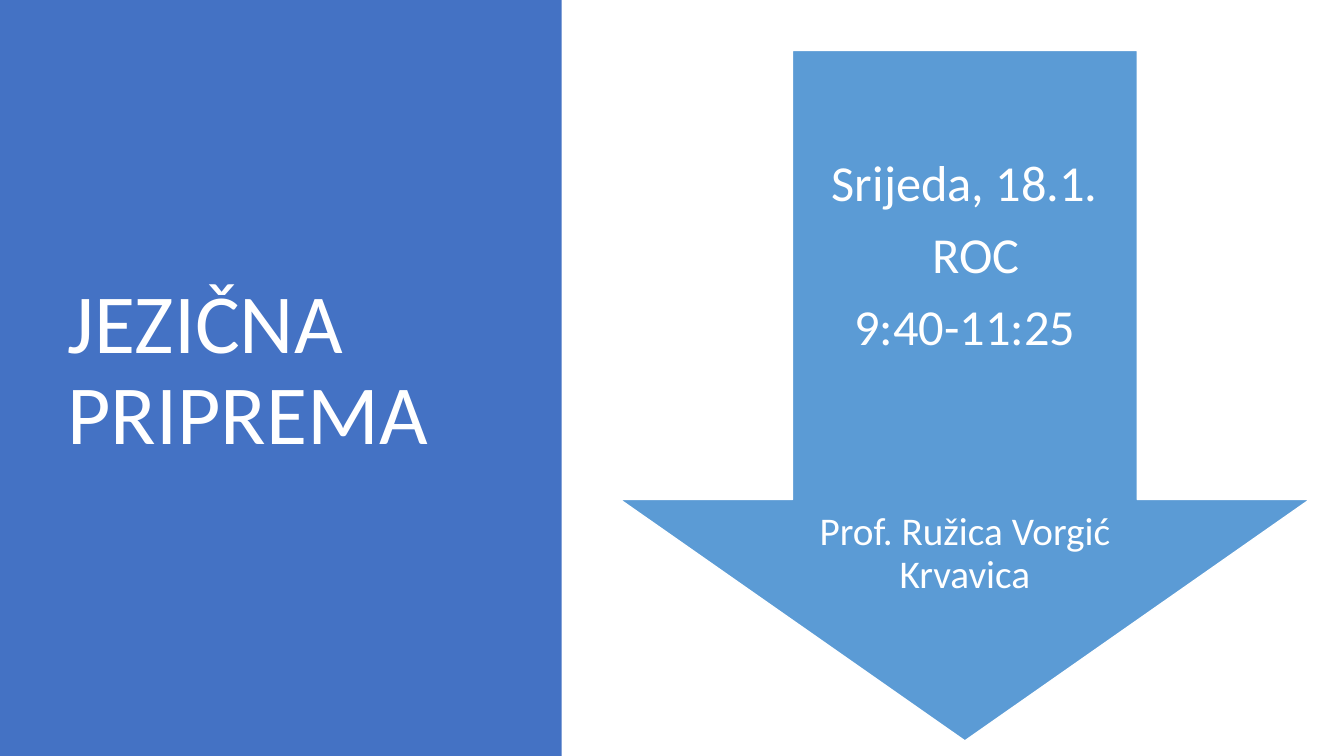
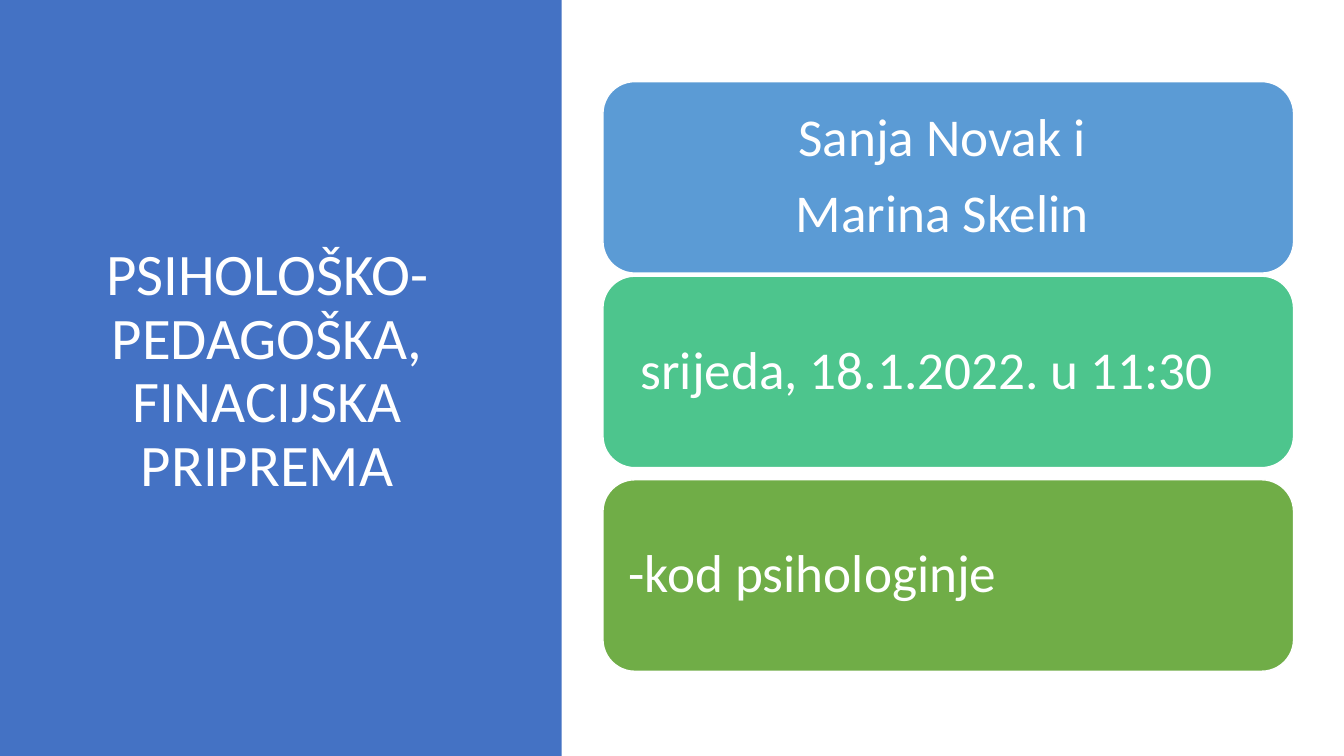
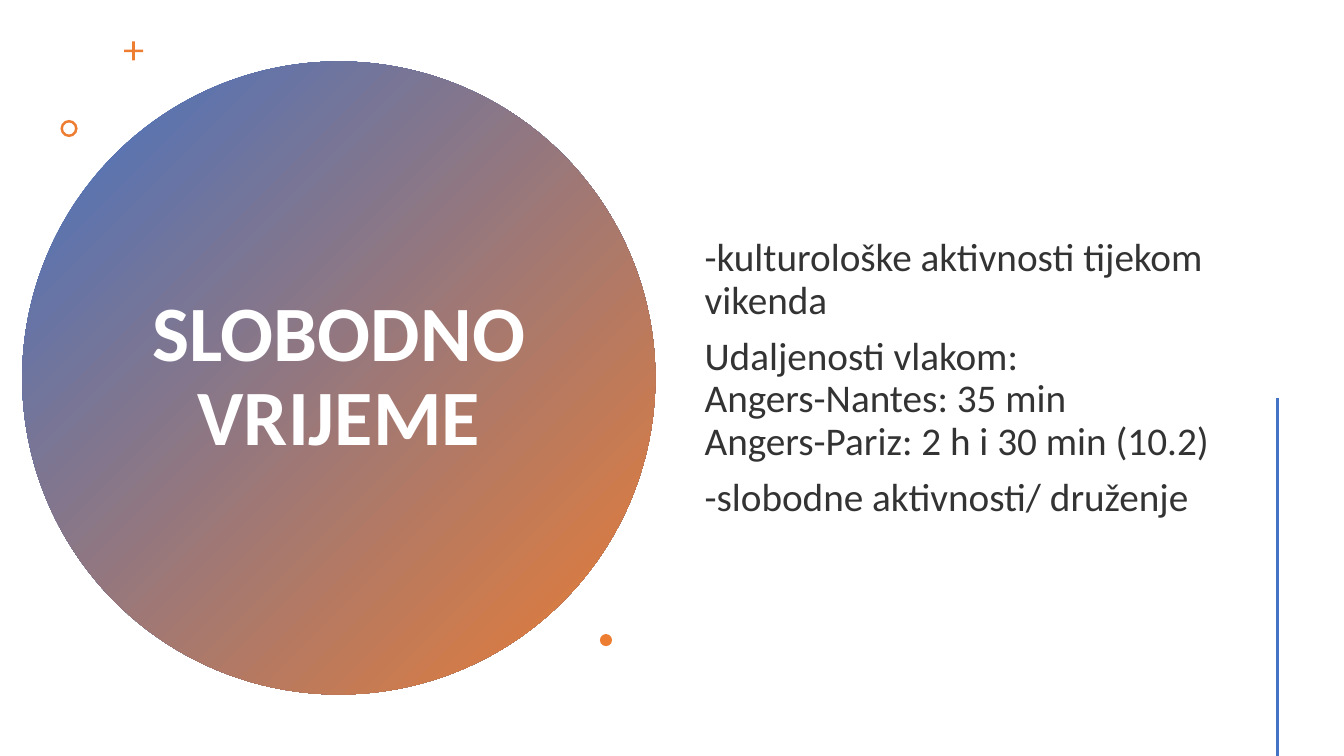
from pptx import Presentation
from pptx import util as u
from pptx.dml.color import RGBColor
from pptx.enum import shapes, text
from pptx.oxml import parse_xml
from pptx.oxml.ns import nsdecls

W, H = 13.33, 7.5
BLUE, SKY, MINT, GREEN = "4472C4", "5B9BD5", "4DC58D", "70AD47"
ORANGE, WHITE, DARK = "ED7D31", "FFFFFF", "333333"
LEFT, CENTER = text.PP_ALIGN.LEFT, text.PP_ALIGN.CENTER
KIND = shapes.MSO_SHAPE


def rgb(color):
    """Turn a hex string into a colour."""
    return RGBColor.from_string(color)


def inches(box):
    """Turn a box in inches into lengths."""
    return [u.Inches(v) for v in box]


def shape(s, kind, box, fill, line=None, adj=()):
    """Add a flat preset shape."""
    sp = s.shapes.add_shape(kind, *inches(box))
    sp.shadow.inherit = False
    for i, value in enumerate(adj):
        sp.adjustments[i] = value
    sp.fill.solid()
    sp.fill.fore_color.rgb = rgb(fill)
    if line:
        sp.line.color.rgb = rgb(line)
        sp.line.width = u.Pt(1)
    else:
        sp.line.fill.background()
    return sp


def write(sp, lines, size, align=CENTER, color=WHITE, bold=False,
          gaps=None, margins=None, inset=(0.1, 0.05)):
    """Fill a shape with lines; gaps are points above each line, margins left and right inches."""
    tf = sp.text_frame
    tf.word_wrap = True
    tf.vertical_anchor = text.MSO_ANCHOR.MIDDLE
    tf.margin_left = tf.margin_right = u.Inches(inset[0])
    tf.margin_top = tf.margin_bottom = u.Inches(inset[1])
    tf.text = "\n".join(lines)
    for i, p in enumerate(tf.paragraphs):
        p.alignment = align
        p.line_spacing = 0.9
        p.space_before = u.Pt(gaps[i] if gaps else 0)
        for side, value in (margins or {}).get(i, {}).items():
            p._p.get_or_add_pPr().set(side, str(u.Inches(value)))
        for r in p.runs:
            r.font.name = "Calibri"
            r.font.size = u.Pt(size)
            r.font.bold = bold
            r.font.color.rgb = rgb(color)


def label(s, box, lines, size, **style):
    """Add a text box."""
    write(s.shapes.add_textbox(*inches(box)), lines, size, **style)


def title_band(s, title, size, align):
    """Draw the blue band at the left with the slide title."""
    shape(s, KIND.RECTANGLE, (0, 0, 5.57, H), BLUE)
    label(s, (0.57, 0.68, 4.16, 6.02), [title], size, align=align)


def arrow(s, box):
    """Draw the down arrow with the date on its shaft and the teacher in its head."""
    x, y, w, h = box
    shape(s, KIND.DOWN_ARROW, box, SKY, WHITE, (0.5, 0.35))
    shaft = x + w / 4
    label(s, (shaft, y + 0.1 * h, w / 2, 0.4 * h),
          ["Srijeda, 18.1.", "ROC", "9:40-11:25"], 36,
          gaps=(0, 12.6, 12.6), margins={1: {"marL": 0.22}})
    label(s, (shaft, y + 0.63 * h, w / 2, 0.2 * h),
          ["Prof. Ružica Vorgić Krvavica"], 28, inset=(0.2, 0))


def cards(s, box, tops):
    """Draw the stack of rounded cards at the given tops within the box."""
    x, y, w, h = box
    rows = [
        (SKY, ["Sanja Novak i", "Marina Skelin"], CENTER, {0: {"marR": 0.12}}),
        (MINT, ["srijeda, 18.1.2022. u 11:30"], LEFT, {0: {"marL": 0.12}}),
        (GREEN, ["-kod psihologinje"], LEFT, None),
    ]
    for top, (fill, lines, align, margins) in zip(tops, rows):
        sp = shape(s, KIND.ROUNDED_RECTANGLE, (x, y + top, w, h), fill, WHITE)
        write(sp, lines, 38, align, gaps=(0, 13.3), margins=margins, inset=(0.16, 0.16))


def title_disc(s, box, title):
    """Draw the gradient disc with its title and the small ornaments around it."""
    x, y, d, _ = box
    disc = shape(s, KIND.OVAL, box, BLUE)
    disc.fill.gradient()
    disc.fill.gradient_angle = 315
    for stop, color in zip(disc.fill.gradient_stops, (BLUE, ORANGE)):
        stop.color.rgb = rgb(color)
    label(s, (x + 0.18 * d, y + 0.13 * d, 0.64 * d, 0.74 * d), [title], 56, bold=True)
    ornaments = [
        (KIND.CROSS, 1.01, -0.2, 0.19, (0.43,)),
        (KIND.DONUT, 0.38, 0.58, 0.17, (0.15,)),
        (KIND.OVAL, 5.73, 5.68, 0.12, ()),
    ]
    for kind, dx, dy, size, adj in ornaments:
        shape(s, kind, (x + dx, y + dy, size, size), ORANGE, adj=adj)


def side_line(s, x, top):
    """Draw the vertical line running to the foot of the slide."""
    line = s.shapes.add_connector(shapes.MSO_CONNECTOR.STRAIGHT, *inches((x, top, x, H)))
    line.line.color.rgb = rgb(BLUE)
    line.line.width = u.Pt(2)
    line._element.spPr.append(parse_xml(f"<a:effectLst {nsdecls('a')}/>"))


def language_slide(s):
    """Build the language preparation slide."""
    title_band(s, "JEZIČNA PRIPREMA", 60, LEFT)
    arrow(s, (6.15, 0.5, 6.84, 6.85))


def pedagogy_slide(s):
    """Build the pedagogical and financial preparation slide."""
    title_band(s, "PSIHOLOŠKO-PEDAGOŠKA, FINACIJSKA PRIPREMA", 42, CENTER)
    cards(s, (5.98, 0.81, 6.85, 1.9), (0, 1.93, 3.95))


def leisure_slide(s):
    """Build the free time slide."""
    title_disc(s, (0.22, 0.61, 6.28, 6.28), "SLOBODNO VRIJEME")
    lines = [
        "-kulturološke aktivnosti tijekom vikenda",
        "Udaljenosti vlakom:",
        "Angers-Nantes: 35 min",
        "Angers-Pariz: 2 h i 30 min (10.2)",
        "-slobodne aktivnosti/ druženje",
    ]
    label(s, (6.89, 0.57, 5.22, 6.38), lines, 28, align=LEFT, color=DARK,
          gaps=(10, 10, 0, 0, 10))
    side_line(s, 12.67, 3.95)


def main():
    """Build and save the presentation."""
    prs = Presentation()
    prs.slide_width, prs.slide_height = u.Inches(W), u.Inches(H)
    for build in (language_slide, pedagogy_slide, leisure_slide):
        build(prs.slides.add_slide(prs.slide_layouts[6]))
    prs.save("out.pptx")


if __name__ == "__main__":
    main()
